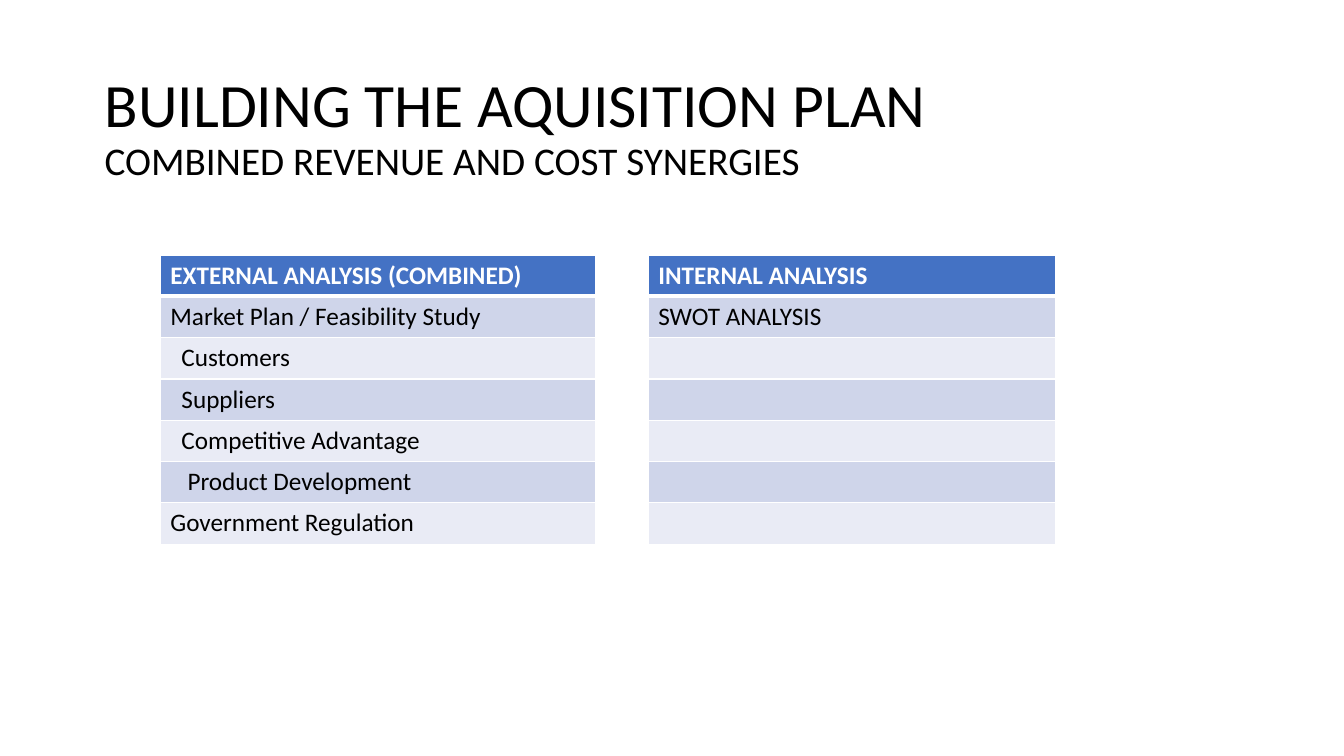
from pptx import Presentation
from pptx.dml.color import RGBColor as RGB
from pptx.enum.text import MSO_ANCHOR as ANCHOR
from pptx.oxml import parse_xml
from pptx.oxml.ns import nsdecls
from pptx.util import Inches, Pt

COLORS = {"text": "000000", "white": "FFFFFF", "header": "4472C4",
          "dark_band": "CFD5EA", "light_band": "E9EBF5"}
FONT = "Calibri"

COLUMN_WIDTHS = [4.32, 0.52, 4.04]
ROW_HEIGHT = 0.41
EXTERNAL = [
    ("EXTERNAL ANALYSIS (COMBINED)", 0),
    ("Market Plan / Feasibility Study", 0),
    ("Customers", 0.11),
    ("Suppliers", 0.11),
    ("Competitive Advantage", 0.11),
    ("Product Development", 0.17),
    ("Government Regulation", 0),
]
INTERNAL = ["INTERNAL ANALYSIS", "SWOT ANALYSIS"]


class SlideBuilder:
    def __init__(self, slide):
        self.slide = slide

    def run(self, p, text, size, color="text", bold=False):
        r = p.add_run()
        r.text = text
        r.font.name = FONT
        r.font.size = Pt(size)
        r.font.bold = bold
        r.font.color.rgb = RGB.from_string(COLORS[color])

    def title(self, heading, subheading, left, top, width, height):
        sp = self.slide.shapes.add_textbox(
            Inches(left), Inches(top), Inches(width), Inches(height))
        tf = sp.text_frame
        tf.word_wrap = True
        tf.vertical_anchor = ANCHOR.BOTTOM
        p = tf.paragraphs[0]
        p.line_spacing = 0.9
        self.run(p, heading, 44)
        p.add_line_break()
        self.run(p, subheading, 28)

    def borders(self, cell, top, bottom):
        tcPr = cell._tc.get_or_add_tcPr()
        sides = {"lnL": 1, "lnR": 1, "lnT": top, "lnB": bottom}
        for i, (side, width) in enumerate(sides.items()):
            tcPr.insert(i, parse_xml(
                f'<a:{side} {nsdecls("a")} w="{Pt(width)}"><a:solidFill>'
                f'<a:srgbClr val="{COLORS["white"]}"/></a:solidFill></a:{side}>'))

    def cell(self, cell, row, text, indent, fill):
        if fill:
            cell.fill.solid()
            cell.fill.fore_color.rgb = RGB.from_string(COLORS[fill])
        else:
            cell.fill.background()
        self.borders(cell, 3 if row == 1 else 1, 3 if row == 0 else 1)
        cell.margin_left = Inches(0.1 + indent)
        p = cell.text_frame.paragraphs[0]
        p.font.size = Pt(18)
        if text:
            self.run(p, text, 18, "white" if row == 0 else "text", row == 0)

    def table(self, left, top):
        rows = len(EXTERNAL)
        table = self.slide.shapes.add_table(
            rows, len(COLUMN_WIDTHS), Inches(left), Inches(top),
            Inches(sum(COLUMN_WIDTHS)), Inches(rows * ROW_HEIGHT)).table
        for column, width in zip(table.columns, COLUMN_WIDTHS):
            column.width = Inches(width)
        for row, (external, indent) in enumerate(EXTERNAL):
            table.rows[row].height = Inches(ROW_HEIGHT)
            band = "dark_band" if row % 2 else "light_band"
            fill = band if row else "header"
            internal = INTERNAL[row] if row < len(INTERNAL) else ""
            entries = [(external, indent, fill), ("", 0, None), (internal, 0, fill)]
            for col, entry in enumerate(entries):
                self.cell(table.cell(row, col), row, *entry)


def main():
    prs = Presentation()
    prs.slide_width, prs.slide_height = Inches(13.33), Inches(7.5)
    s = SlideBuilder(prs.slides.add_slide(prs.slide_layouts[6]))
    s.title("BUILDING THE AQUISITION PLAN", "COMBINED REVENUE AND COST SYNERGIES",
            0.94, 0.28, 11.38, 1.59)
    s.table(1.59, 2.53)
    prs.save("out.pptx")


if __name__ == "__main__":
    main()
